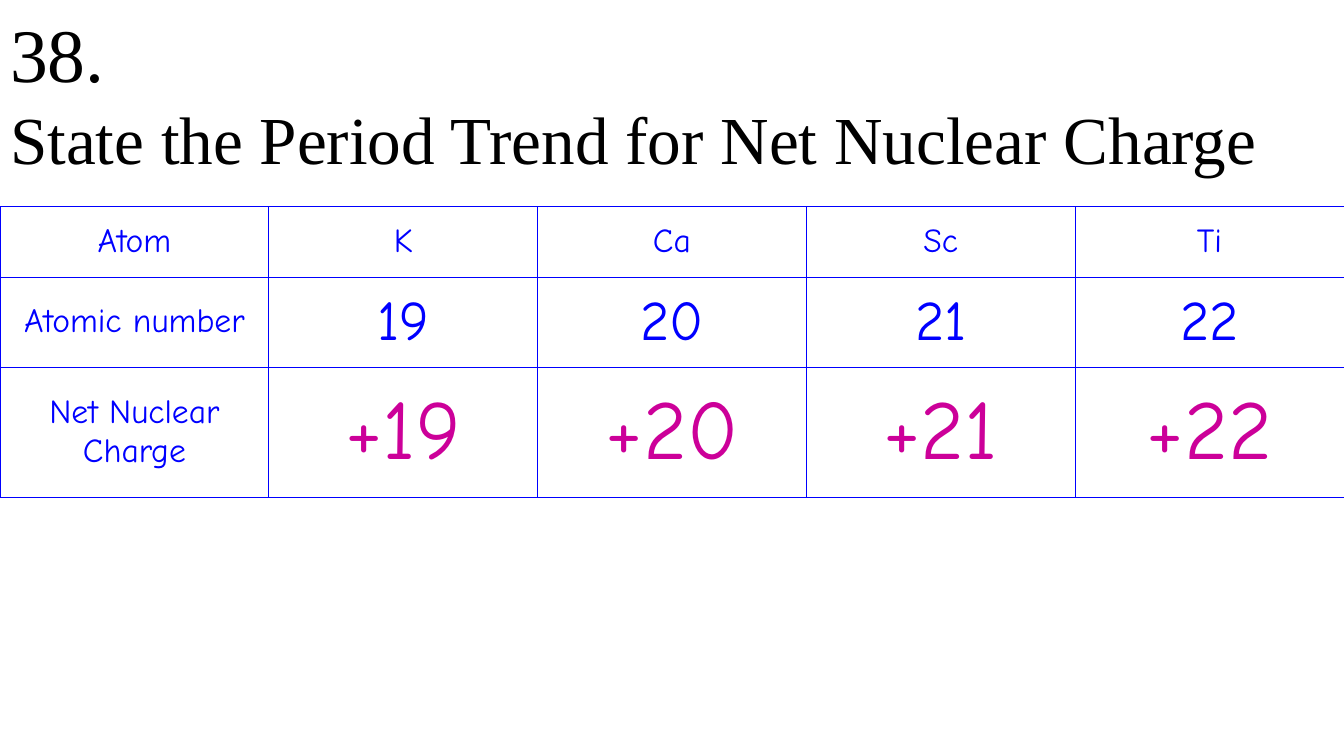
from lxml import etree
from pptx import Presentation
from pptx.dml.color import RGBColor
from pptx.enum.text import MSO_ANCHOR, MSO_AUTO_SIZE, PP_ALIGN
from pptx.oxml.ns import qn
from pptx.util import Inches, Pt

CENTER, LEFT = PP_ALIGN.CENTER, PP_ALIGN.LEFT
MIDDLE, BOTTOM = MSO_ANCHOR.MIDDLE, MSO_ANCHOR.BOTTOM
NO_AUTOFIT = MSO_AUTO_SIZE.NONE

BLACK = RGBColor(0x00, 0x00, 0x00)
WHITE = RGBColor(0xFF, 0xFF, 0xFF)
BLUE = RGBColor(0x00, 0x00, 0xFF)
MAGENTA = RGBColor(0xCC, 0x00, 0x99)
TITLE_FONT, TABLE_FONT = "Times New Roman", "Comic Neue"

QUESTION_NUMBER = "38."
QUESTION = "State the Period Trend for Net Nuclear Charge"
LABEL_SIZE = 24
# label, values, value size, value colour, row height in inches
ROWS = [
    ("Atom", ["K", "Ca", "Sc", "Ti"], 24, BLUE, 0.7),
    ("Atomic number", ["19", "20", "21", "22"], 40, BLUE, 0.89),
    ("Net Nuclear Charge", ["+19", "+20", "+21", "+22"], 60, MAGENTA, 1.29),
]
WIDTH, HEIGHT = Inches(13.33), Inches(7.5)
TITLE_HEIGHT, TABLE_TOP = Inches(1.82), Inches(2.05)


def add_run(p, text, font, size, color):
    r = p.add_run()
    r.text = text
    r.font.name, r.font.size = font, Pt(size)
    r.font.color.rgb = color


def set_borders(cell, color, width):
    tcPr = cell._tc.get_or_add_tcPr()
    for i, side in enumerate(("a:lnL", "a:lnR", "a:lnT", "a:lnB")):
        ln = etree.Element(qn(side), w=str(Pt(width)))
        fill = etree.SubElement(ln, qn("a:solidFill"))
        etree.SubElement(fill, qn("a:srgbClr"), val=str(color))
        tcPr.insert(i, ln)


def add_title(slide):
    sp = slide.shapes.title
    sp.left, sp.top, sp.width, sp.height = 0, 0, WIDTH, TITLE_HEIGHT
    tf = sp.text_frame
    tf.word_wrap, tf.auto_size = True, NO_AUTOFIT
    tf.vertical_anchor = BOTTOM
    p = tf.paragraphs[0]
    p.alignment = LEFT
    add_run(p, QUESTION_NUMBER, TITLE_FONT, 54, BLACK)
    p.add_line_break()
    add_run(p, QUESTION, TITLE_FONT, 48, BLACK)


def add_trend_table(slide):
    columns = 1 + len(ROWS[0][1])
    height = Inches(sum(row[-1] for row in ROWS))
    table = slide.shapes.add_table(len(ROWS), columns, 0, TABLE_TOP, WIDTH, height).table
    for i, (label, values, size, color, row_height) in enumerate(ROWS):
        table.rows[i].height = Inches(row_height)
        entries = [(label, LABEL_SIZE, BLUE)] + [(v, size, color) for v in values]
        for j, (text, text_size, text_color) in enumerate(entries):
            cell = table.cell(i, j)
            cell.vertical_anchor = MIDDLE
            cell.fill.solid()
            cell.fill.fore_color.rgb = WHITE
            set_borders(cell, BLUE, 0.5)
            p = cell.text_frame.paragraphs[0]
            p.alignment = CENTER
            add_run(p, text, TABLE_FONT, text_size, text_color)


prs = Presentation()
prs.slide_width, prs.slide_height = WIDTH, HEIGHT
slide = prs.slides.add_slide(prs.slide_layouts[5])
add_title(slide)
add_trend_table(slide)
prs.save("out.pptx")
